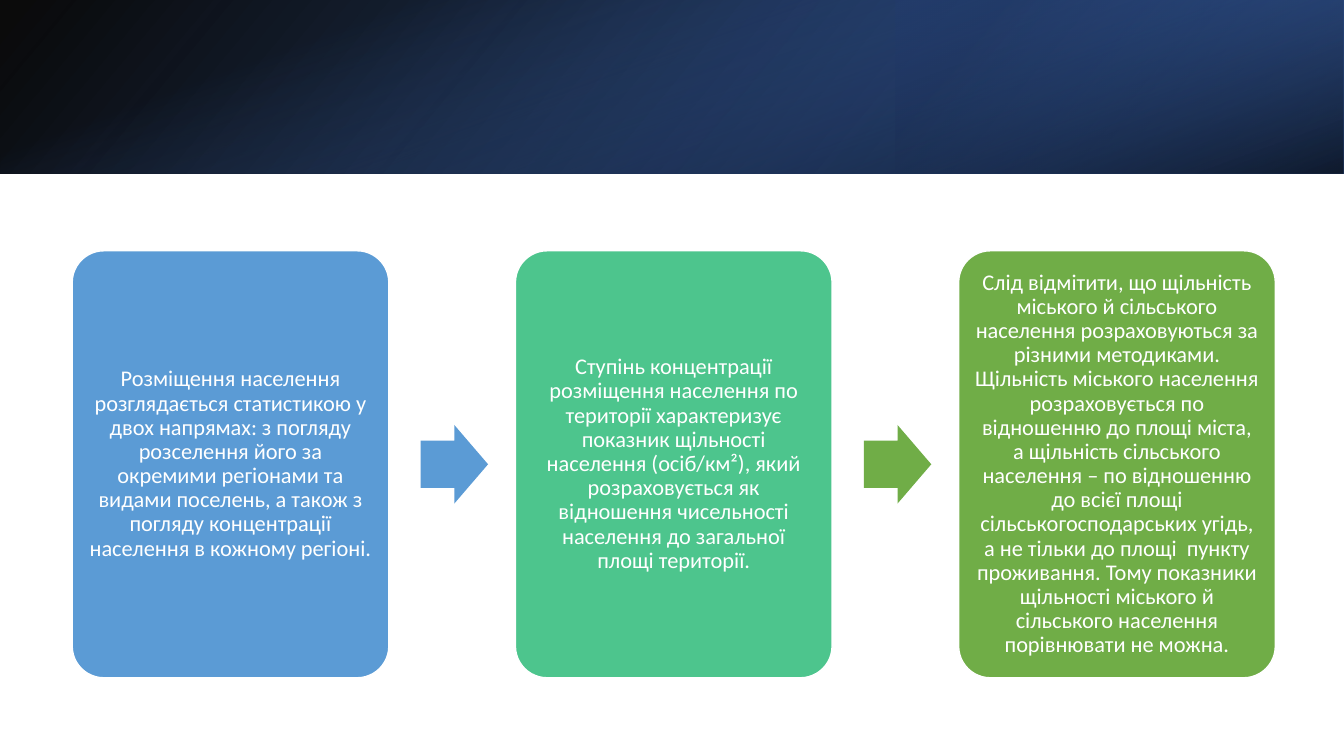
import pptx
import pptx.dml.color
import pptx.enum.shapes
import pptx.enum.text
import pptx.oxml
import pptx.oxml.ns
import pptx.util

Cm = pptx.util.Cm
RGB = pptx.dml.color.RGBColor
SHAPES = pptx.enum.shapes.MSO_SHAPE

BLACK = RGB(0x00, 0x00, 0x00)
WHITE = RGB(0xFF, 0xFF, 0xFF)
NAVY = RGB(0x20, 0x38, 0x64)
DEEP_BLUE = RGB(0x2F, 0x55, 0x97)
ROYAL_BLUE = RGB(0x44, 0x72, 0xC4)
SKY_BLUE = RGB(0x5B, 0x9B, 0xD5)
MINT = RGB(0x4D, 0xC5, 0x8D)
GREEN = RGB(0x70, 0xAD, 0x47)

SLIDE_WIDTH, SLIDE_HEIGHT = 33.87, 19.05
BANNER_HEIGHT = 4.37

STEPS = [
    ("Розміщення населення розглядається статистикою у двох напрямах: "
     "з погляду розселення його за окремими регіонами та видами поселень, "
     "а також з погляду концентрації населення в кожному регіоні.",
     SKY_BLUE, SKY_BLUE),
    ("Ступінь концентрації розміщення населення по території характеризує "
     "показник щільності населення (осіб/км²), який розраховується як "
     "відношення чисельності населення до загальної площі території.",
     MINT, GREEN),
    ("Слід відмітити, що щільність міського й сільського населення "
     "розраховуються за різними методиками. Щільність міського населення "
     "розраховується по відношенню до площі міста, а щільність сільського "
     "населення – по відношенню до всієї площі сільськогосподарських угідь, "
     "а не тільки до площі  пункту проживання. Тому показники щільності "
     "міського й сільського населення порівнювати не можна.",
     GREEN, None),
]


def add_plain(slide, kind, left, top, width, height):
    """Add a preset shape without shadow or outline, measured in centimetres."""
    shape = slide.shapes.add_shape(kind, Cm(left), Cm(top), Cm(width), Cm(height))
    shape.shadow.inherit = False
    shape.line.fill.background()
    return shape


def add_gradient_layer(slide, left, top, width, height, stops, angle, rotation=0, flipped=False):
    """Add a translucent gradient whose rotated shape covers the given box."""
    if rotation == 90:
        left, top = left + (width - height) / 2, top + (height - width) / 2
        width, height = height, width
    layer = add_plain(slide, SHAPES.RECTANGLE, left, top, width, height)
    layer.rotation = rotation
    if flipped:
        layer._element.spPr.xfrm.set("flipH", "1")
    layer.fill.gradient()
    layer.fill.gradient_angle = 360 - angle
    for stop, (position, color, opacity) in zip(layer.fill.gradient_stops, stops):
        stop.position = position
        stop.color.rgb = color
    colors = layer._element.spPr.iter(pptx.oxml.ns.qn("a:srgbClr"))
    for color_element, (position, color, opacity) in zip(colors, stops):
        alpha = pptx.oxml.parse_xml(f'<a:alpha {pptx.oxml.ns.nsdecls("a")} val="{opacity * 1000}"/>')
        color_element.append(alpha)


def add_banner(slide, left, top, width, height):
    """Layer the dark blue banner in the given box."""
    add_gradient_layer(slide, left, top, width, height,
                       [(0, BLACK, 96), (1, DEEP_BLUE, 100)], 140, flipped=True)
    add_gradient_layer(slide, left + width * 2 / 3, top, width / 3, height,
                       [(0.19, NAVY, 68), (1, ROYAL_BLUE, 79)], 320, rotation=180, flipped=True)
    add_gradient_layer(slide, left, top, width, height,
                       [(0.23, ROYAL_BLUE, 0), (0.99, BLACK, 74)], 340, rotation=90)


def add_card(slide, left, top, width, height, text, color):
    """Add a rounded card with centred white text."""
    card = add_plain(slide, SHAPES.ROUNDED_RECTANGLE, left, top, width, height)
    card.adjustments[0] = 0.1
    card.fill.solid()
    card.fill.fore_color.rgb = color
    card.line.color.rgb = WHITE
    card.line.width = pptx.util.Pt(1)
    frame = card.text_frame
    frame.word_wrap = True
    frame.vertical_anchor = pptx.enum.text.MSO_ANCHOR.MIDDLE
    frame.margin_left = frame.margin_right = frame.margin_top = frame.margin_bottom = Cm(0.17)
    statement = frame.paragraphs[0]
    statement.text = text
    statement.alignment = pptx.enum.text.PP_ALIGN.CENTER
    statement.line_spacing = 0.9
    statement.font.name = "Calibri"
    statement.font.size = pptx.util.Pt(16)
    statement.font.color.rgb = WHITE


def add_process(slide, left, top, width, height):
    """Spread the step cards over the box, with an arrow after each but the last."""
    card_width, arrow_width, arrow_height, arrow_gap = 7.98, 1.7, 1.98, 0.8
    pitch = (width - card_width) / (len(STEPS) - 1)
    for index, (text, card_color, arrow_color) in enumerate(STEPS):
        card_left = left + index * pitch
        add_card(slide, card_left, top, card_width, height, text, card_color)
        if arrow_color is not None:
            arrow = add_plain(slide, SHAPES.RIGHT_ARROW, card_left + card_width + arrow_gap,
                              top + (height - arrow_height) / 2, arrow_width, arrow_height)
            arrow.adjustments[0] = 0.6
            arrow.adjustments[1] = 0.5
            arrow.fill.solid()
            arrow.fill.fore_color.rgb = arrow_color


def main():
    """Build the slide and save it."""
    presentation = pptx.Presentation()
    presentation.slide_width = Cm(SLIDE_WIDTH)
    presentation.slide_height = Cm(SLIDE_HEIGHT)
    slide = presentation.slides.add_slide(presentation.slide_layouts[6])
    add_banner(slide, 0, 0, SLIDE_WIDTH, BANNER_HEIGHT)
    add_process(slide, 1.82, 6.32, 30.32, 10.76)
    presentation.save("out.pptx")


if __name__ == "__main__":
    main()
